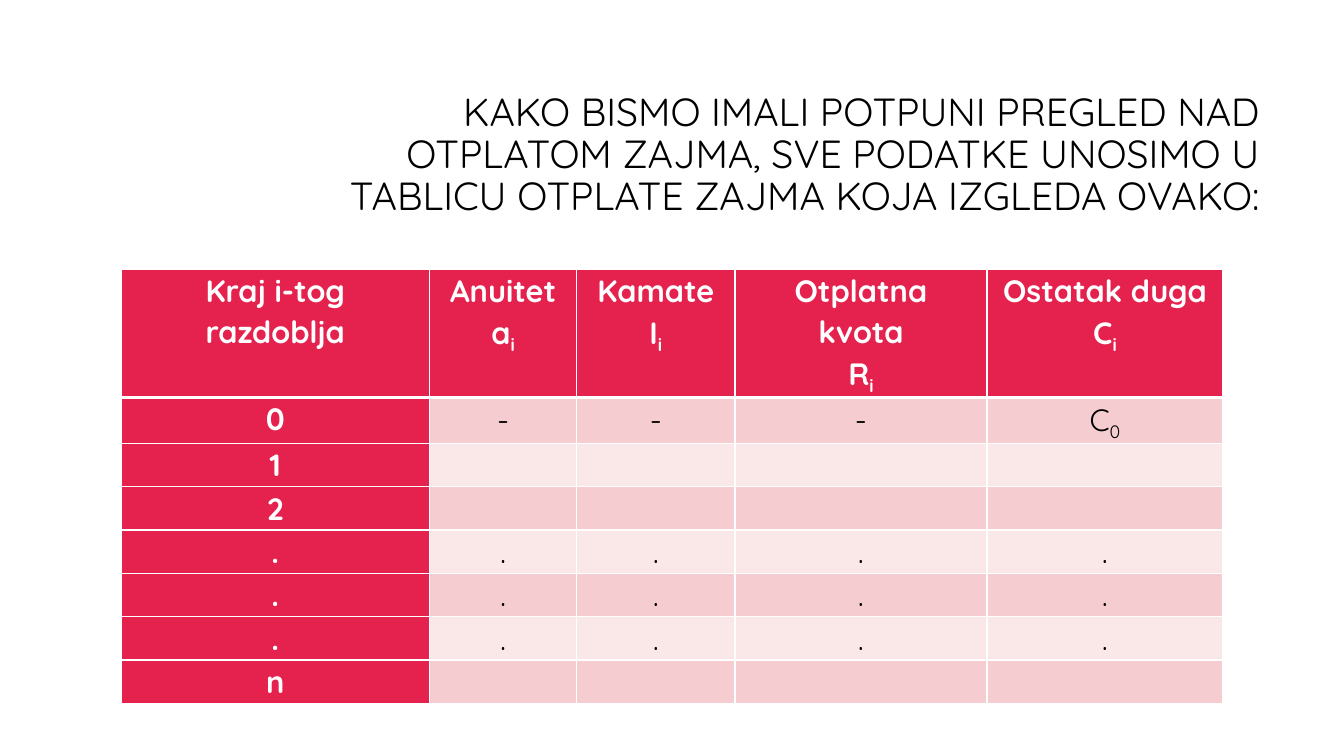
import lxml.etree
import pptx
import pptx.util
import pptx.dml.color
import pptx.enum.text
import pptx.oxml.ns

RGB = pptx.dml.color.RGBColor
WHITE = RGB(0xFF, 0xFF, 0xFF)
BLACK = RGB(0, 0, 0)
RED = RGB(0xE5, 0x22, 0x4E)
PINK = RGB(0xF5, 0xCD, 0xD0)
PALE = RGB(0xFA, 0xE8, 0xE9)

SCALE = 9144  # EMU in one px, 100 px to the inch
TITLE = ("KAKO BISMO IMALI POTPUNI PREGLED NAD OTPLATOM ZAJMA, "
         "SVE PODATKE UNOSIMO U TABLICU OTPLATE ZAJMA KOJA IZGLEDA OVAKO:")

# An underscore starts a subscript
HEAD = ["Kraj i-tog razdoblja", "Anuitet\na_i", "Kamate\nI_i",
        "Otplatna kvota\nR_i", "Ostatak duga\nC_i"]
BLANK = [""] * 4
DOTS = ["."] * 5
ROWS = [HEAD, ["0", "-", "-", "-", "C_0"], ["1"] + BLANK, ["2"] + BLANK,
        DOTS, DOTS, DOTS, ["n"] + BLANK]
WIDTHS = [306, 146, 157, 250, 234]
HEIGHTS = [126] + [43] * (len(ROWS) - 1)


def px(count):
    return pptx.util.Emu(count * SCALE)


class Deck:
    font = "Quicksand"

    def __init__(self):
        self.show = pptx.Presentation()
        self.show.slide_width, self.show.slide_height = px(1333), px(750)
        self.slide = self.show.slides.add_slide(self.show.slide_layouts[5])

    def style(self, para, size, color, bold, space):
        para.line_spacing = space
        para.font.name = self.font
        para.font.size = pptx.util.Pt(size)
        para.font.bold = bold
        para.font.color.rgb = color

    def title(self, text, left, top, width, height):
        box = self.slide.shapes.title
        box.left, box.top, box.width, box.height = map(px, (left, top, width, height))
        frame = box.text_frame
        frame.text = text
        frame.word_wrap = True
        frame.auto_size = pptx.enum.text.MSO_AUTO_SIZE.NONE
        frame.vertical_anchor = pptx.enum.text.MSO_ANCHOR.MIDDLE
        para = frame.paragraphs[0]
        para.alignment = pptx.enum.text.PP_ALIGN.RIGHT
        self.style(para, 28, BLACK, False, 0.9)

    def border(self, cell, side, width):
        line = lxml.etree.SubElement(cell._tc.get_or_add_tcPr(),
                                     pptx.oxml.ns.qn("a:ln" + side))
        line.set("w", str(pptx.util.Pt(width)))
        fill = lxml.etree.SubElement(line, pptx.oxml.ns.qn("a:solidFill"))
        tint = lxml.etree.SubElement(fill, pptx.oxml.ns.qn("a:srgbClr"))
        tint.set("val", str(WHITE))

    def cell(self, cell, text, row, col):
        label = row == 0 or col == 0
        # Borders, with a thick rule under the header
        for side in "LRTB":
            thick = (row, side) in ((0, "B"), (1, "T"))
            self.border(cell, side, 3 if thick else 1)
        cell.fill.solid()
        cell.fill.fore_color.rgb = RED if label else PINK if row % 2 else PALE
        cell.margin_left = cell.margin_right = px(15)
        cell.margin_top = cell.margin_bottom = 0
        # Text
        frame = cell.text_frame
        for num, line in enumerate(text.split("\n")):
            para = frame.add_paragraph() if num else frame.paragraphs[0]
            para.alignment = pptx.enum.text.PP_ALIGN.CENTER
            self.style(para, 22, WHITE if label else BLACK, label, 1.07)
            base, mark, sub = line.partition("_")
            if base:
                para.add_run().text = base
            if mark:
                run = para.add_run()
                run.text = sub
                run._r.get_or_add_rPr().set("baseline", "-25000")

    def table(self, left, top, rows, widths, heights):
        grid = self.slide.shapes.add_table(
            len(rows), len(widths), px(left), px(top),
            px(sum(widths)), px(sum(heights))).table
        for col, width in zip(grid.columns, widths):
            col.width = px(width)
        for row, height in zip(grid.rows, heights):
            row.height = px(height)
        for row, texts in enumerate(rows):
            for col, text in enumerate(texts):
                self.cell(grid.cell(row, col), text, row, col)


def main():
    deck = Deck()
    # Heading
    deck.title(TITLE, 317, 84, 942, 141)
    # Loan repayment table
    deck.table(120, 267, ROWS, WIDTHS, HEIGHTS)
    deck.show.save("out.pptx")


if __name__ == "__main__":
    main()
